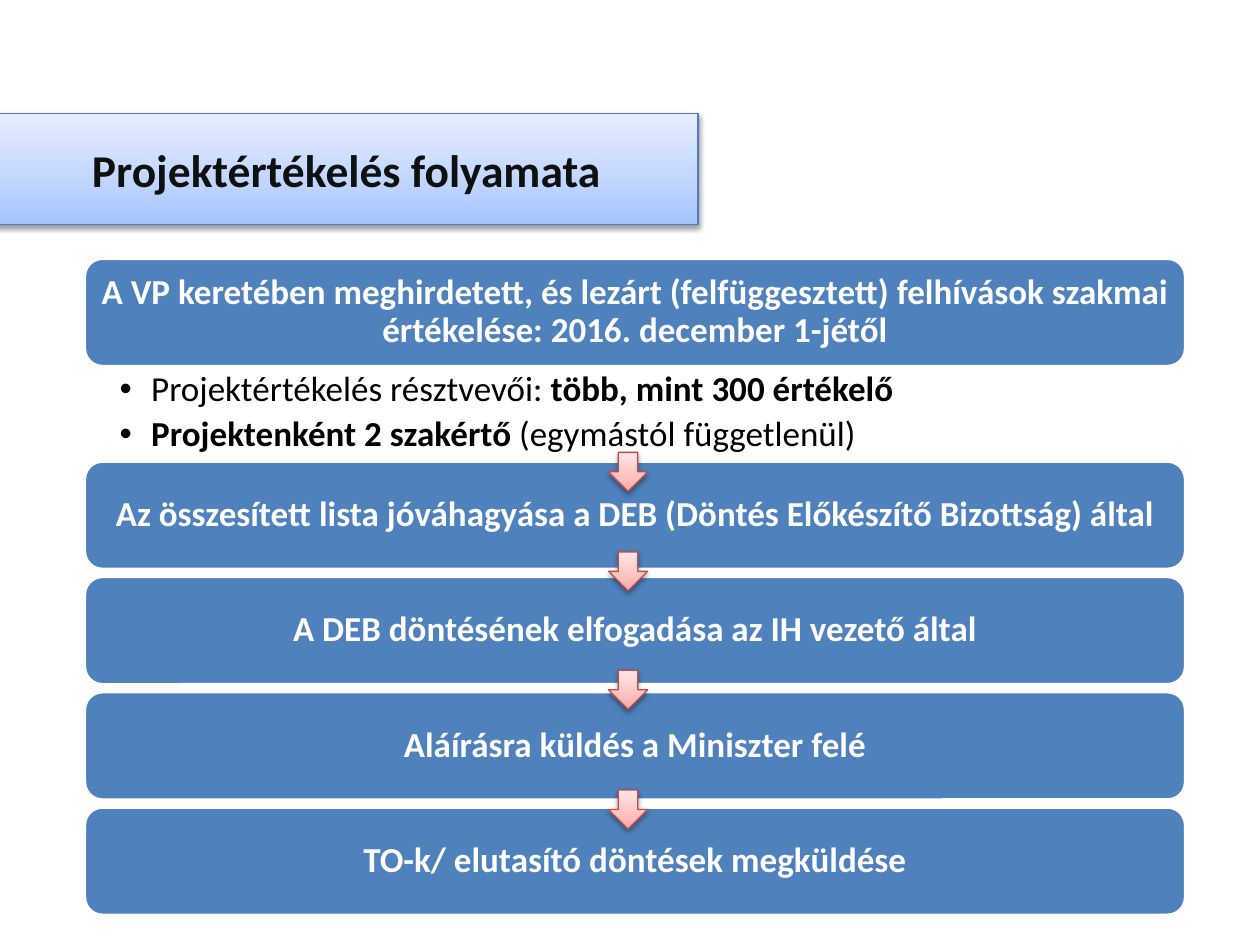
from lxml import etree
from pptx import Presentation
from pptx import util as u
from pptx.dml.color import RGBColor
from pptx.enum import shapes, text
from pptx.oxml import ns

TITLE = "Projektértékelés folyamata"
STEPS = [
    "A VP keretében meghirdetett, és lezárt (felfüggesztett) felhívások szakmai értékelése: 2016. december 1-jétől",
    "Az összesített lista jóváhagyása a DEB (Döntés Előkészítő Bizottság) által",
    "A DEB döntésének elfogadása az IH vezető által",
    "Aláírásra küldés a Miniszter felé",
    "TO-k/ elutasító döntések megküldése",
]
DETAILS = [
    [("Projektértékelés résztvevői: ", False), ("több, mint 300 értékelő", True)],
    [("Projektenként 2 szakértő ", True), ("(egymástól függetlenül)", False)],
]
ARROW_TOPS = [3.59, 4.38, 5.32, 6.27]

THEME = {
    "font": "Calibri",
    "title_size": 26,
    "text_size": 20,
    "title": "0D110F",
    "body": "000000",
    "white": "FFFFFF",
    "step": "4F81BD",
    "title_line": "4B7EBC",
    "arrow_line": "BF4C48",
    "title_gradient": [(0, "A4C4FF"), (35, "BFD4FF"), (100, "E6EEFF")],
    "arrow_gradient": [(0, "FFA6A5"), (35, "FFC0BF"), (100, "FFE7E7")],
}

LEFT, WIDTH, STEP_HEIGHT = 0.67, 8.74, 0.86
FIRST_TOP, SECOND_TOP, PITCH = 2.05, 3.66, 0.915
ARROW_LEFT, ARROW_SIZE = 4.83, 0.31


def color(name):
    return RGBColor.from_string(THEME[name])


def place(shape, left, top, width, height):
    shape.left, shape.top = u.Inches(left), u.Inches(top)
    shape.width, shape.height = u.Inches(width), u.Inches(height)


def set_line(shape, name, points):
    shape.line.color.rgb = color(name)
    shape.line.width = u.Pt(points)


def add_element(parent, tag, **attributes):
    return etree.SubElement(parent, ns.qn(tag), attributes)


def set_glossy(shape, gradient, line):
    set_line(shape, line, 0.75)
    shape.shadow.inherit = False
    properties = shape.element.spPr
    fill = etree.Element(ns.qn("a:gradFill"), rotWithShape="1")
    stops = add_element(fill, "a:gsLst")
    for position, value in THEME[gradient]:
        stop = add_element(stops, "a:gs", pos=str(position * 1000))
        add_element(stop, "a:srgbClr", val=value)
    add_element(fill, "a:lin", ang="16200000", scaled="0")
    properties.find(ns.qn("a:ln")).addprevious(fill)
    shadow = add_element(
        properties.find(ns.qn("a:effectLst")), "a:outerShdw",
        blurRad=str(u.Pt(3.1)), dist=str(u.Pt(1.6)), dir="5400000", rotWithShape="0")
    shadow_color = add_element(shadow, "a:srgbClr", val="000000")
    add_element(shadow_color, "a:alpha", val="38000")


def set_frame(shape, anchor, left, top, right, bottom):
    frame = shape.text_frame
    frame.word_wrap = True
    frame.auto_size = text.MSO_AUTO_SIZE.NONE
    frame.vertical_anchor = anchor
    frame.margin_left, frame.margin_top = u.Inches(left), u.Inches(top)
    frame.margin_right, frame.margin_bottom = u.Inches(right), u.Inches(bottom)
    return frame


def add_run(paragraph, words, size, name, bold):
    run = paragraph.add_run()
    run.text = words
    run.font.name = THEME["font"]
    run.font.size = u.Pt(THEME[size])
    run.font.color.rgb = color(name)
    run.font.bold = bold


def add_title(slide):
    title = slide.shapes.title
    place(title, -0.04, 0.9, 5.58, 0.88)
    set_glossy(title, "title_gradient", "title_line")
    frame = set_frame(title, text.MSO_ANCHOR.MIDDLE, 0.1, 0.05, 0.1, 0.05)
    paragraph = frame.paragraphs[0]
    paragraph.alignment = text.PP_ALIGN.CENTER
    add_run(paragraph, TITLE, "title_size", "title", True)


def add_details(slide):
    body = slide.placeholders[1]
    place(body, LEFT, 2.92, WIDTH, 0.75)
    frame = set_frame(body, text.MSO_ANCHOR.TOP, 0.28, 0.03, 0.16, 0.03)
    for index, runs in enumerate(DETAILS):
        paragraph = frame.add_paragraph() if index else frame.paragraphs[0]
        paragraph.level = 1
        paragraph.line_spacing = 0.9
        paragraph.space_before = u.Pt(0)
        paragraph.space_after = u.Pt(4)
        properties = paragraph._p.get_or_add_pPr()
        properties.set("marL", str(u.Inches(0.25)))
        properties.set("indent", str(u.Inches(-0.25)))
        add_element(properties, "a:buFont", typeface="Arial")
        add_element(properties, "a:buChar", char="•")
        for words, bold in runs:
            add_run(paragraph, words, "text_size", "body", bold)


def add_step(slide, words, top):
    step = slide.shapes.add_shape(
        shapes.MSO_SHAPE.ROUNDED_RECTANGLE, u.Inches(LEFT), u.Inches(top),
        u.Inches(WIDTH), u.Inches(STEP_HEIGHT))
    step.shadow.inherit = False
    step.fill.solid()
    step.fill.fore_color.rgb = color("step")
    set_line(step, "white", 2)
    frame = set_frame(step, text.MSO_ANCHOR.MIDDLE, 0.08, 0.08, 0.08, 0.08)
    paragraph = frame.paragraphs[0]
    paragraph.alignment = text.PP_ALIGN.CENTER
    paragraph.line_spacing = 0.9
    add_run(paragraph, words, "text_size", "white", True)


def add_arrow(slide, top):
    arrow = slide.shapes.add_shape(
        shapes.MSO_SHAPE.DOWN_ARROW, u.Inches(ARROW_LEFT), u.Inches(top),
        u.Inches(ARROW_SIZE), u.Inches(ARROW_SIZE))
    set_glossy(arrow, "arrow_gradient", "arrow_line")


def main():
    presentation = Presentation()
    presentation.slide_width, presentation.slide_height = u.Inches(10), u.Inches(7.5)
    slide = presentation.slides.add_slide(presentation.slide_layouts[1])
    add_title(slide)
    add_details(slide)
    for index, words in enumerate(STEPS):
        add_step(slide, words, SECOND_TOP + (index - 1) * PITCH if index else FIRST_TOP)
    for top in ARROW_TOPS:
        add_arrow(slide, top)
    presentation.save("out.pptx")


if __name__ == "__main__":
    main()
